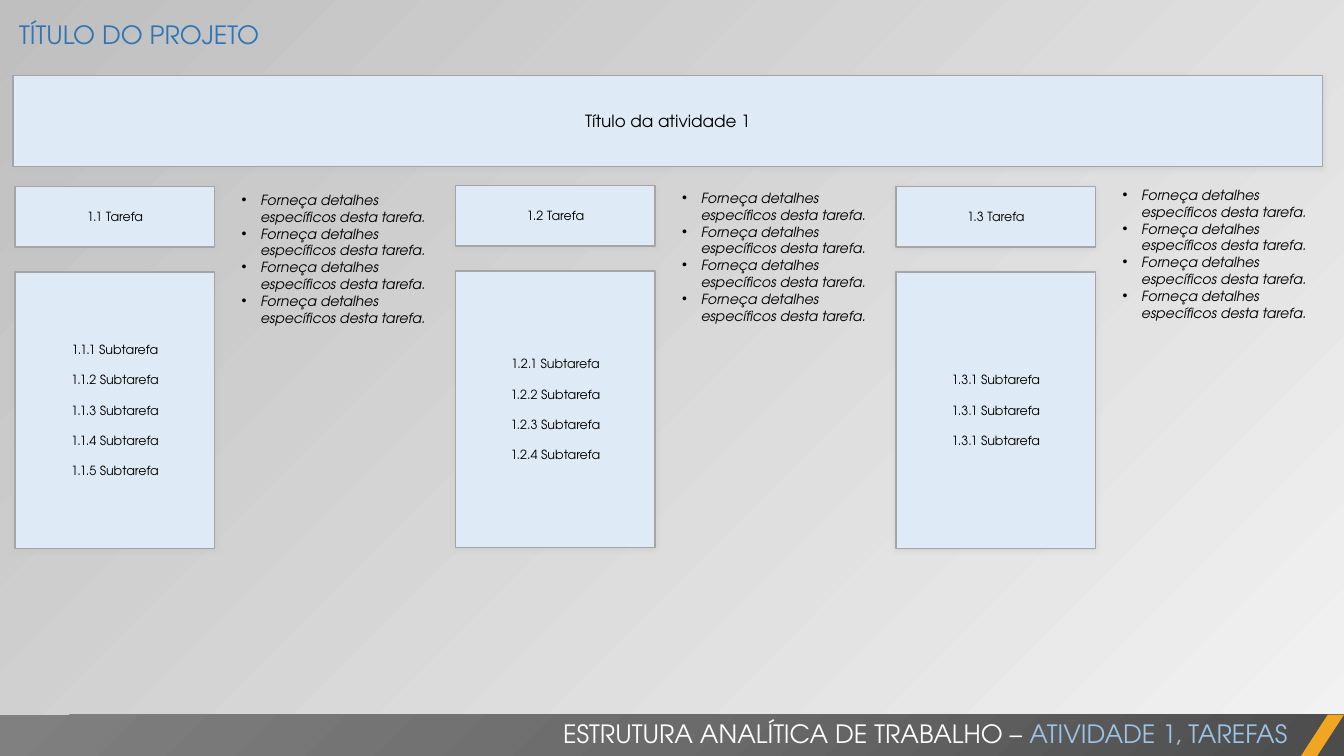
"""Build the work breakdown slide for activity 1 and its tasks."""
from lxml import etree
from pptx import Presentation
from pptx import util as u
from pptx.dml.color import RGBColor
from pptx.enum import shapes, text
from pptx.oxml import parse_xml
from pptx.oxml.ns import nsdecls, qn

FONT = "TeX Gyre Adventor"
COLORS = {
    "box": "DEEBF7", "line": "A5A5A5", "shadow": "BFBFBF", "ink": "000000",
    "title": "2E75B6", "white": "FFFFFF", "accent": "9DC3E6", "stripe": "F0A622",
    "bg_light": "F2F2F2", "bg_dark": "BFBFBF",
    "bar_dark": "4C4C4C", "bar_mid": "6B6B6B", "bar_light": "808080",
}
DETAIL = "Forneça detalhes específicos desta tarefa."
COLUMN_LEFT, COLUMN_PITCH = 10.8, 314.6
TASKS = [
    ("1.1 Tarefa", ["1.1.1", "1.1.2", "1.1.3", "1.1.4", "1.1.5"], 133.2, 133.2),
    ("1.2 Tarefa", ["1.2.1", "1.2.2", "1.2.3", "1.2.4"], 132.5, 131.8),
    ("1.3 Tarefa", ["1.3.1", "1.3.1", "1.3.1"], 133.2, 129.6),
]


def rgb(name):
    """Return a palette colour."""
    return RGBColor.from_string(COLORS[name])


def write(sp, paragraphs, size=9, align="CENTER", anchor="MIDDLE",
          italic=False, bullet=False, gap=0):
    """Fill a shape with paragraphs, each a list of (text, colour) runs."""
    tf = sp.text_frame
    tf.word_wrap = True
    tf.auto_size = text.MSO_AUTO_SIZE.NONE
    tf.vertical_anchor = text.MSO_ANCHOR[anchor]
    for i, runs in enumerate(paragraphs):
        p = tf.add_paragraph() if i else tf.paragraphs[0]
        p.alignment = text.PP_ALIGN[align]
        p.space_before = u.Pt(gap if i else 0)
        if bullet:
            add_bullet(p)
        for words, color in runs:
            r = p.add_run()
            r.text = words
            r.font.name = FONT
            r.font.size = u.Pt(size)
            r.font.italic = italic
            r.font.color.rgb = rgb(color)


def add_bullet(p):
    """Give a paragraph a round bullet and a hanging indent."""
    pPr = p._p.get_or_add_pPr()
    pPr.set("marL", str(u.Pt(13.5)))
    pPr.set("indent", str(u.Pt(-13.5)))
    etree.SubElement(pPr, qn("a:buFont")).set("typeface", "Arial")
    etree.SubElement(pPr, qn("a:buChar")).set("char", "•")


def set_gradient(parent, stops, direction):
    """Replace a solid fill by a gradient of (position, colour, alpha) stops."""
    marks = "".join(
        f'<a:gs pos="{pos * 1000}"><a:srgbClr val="{COLORS[color]}">'
        f'<a:alpha val="{alpha * 1000}"/></a:srgbClr></a:gs>'
        for pos, color, alpha in stops)
    grad = parse_xml(f'<a:gradFill {nsdecls("a")} rotWithShape="1">'
                     f'<a:gsLst>{marks}</a:gsLst>{direction}</a:gradFill>')
    parent.replace(parent.find(qn("a:solidFill")), grad)


def add_preset(s, kind, left, top, width, height, fill):
    """Add a plain preset shape without line or shadow."""
    sp = s.shapes.add_shape(shapes.MSO_SHAPE[kind], u.Pt(left), u.Pt(top),
                            u.Pt(width), u.Pt(height))
    sp.shadow.inherit = False
    sp.fill.solid()
    sp.fill.fore_color.rgb = rgb(fill)
    sp.line.fill.background()
    return sp


def add_box(s, left, top, width, height, lines, **fmt):
    """Add a pale blue box with a soft shadow and centred lines."""
    sp = add_preset(s, "RECTANGLE", left, top, width, height, "box")
    sp.line.color.rgb = rgb("line")
    sp.line.width = u.Pt(1)
    effects = sp._element.spPr.find(qn("a:effectLst"))
    effects.append(parse_xml(
        f'<a:outerShdw {nsdecls("a")} blurRad="{u.Pt(4)}" dist="{u.Pt(1)}" '
        f'dir="5400000" algn="t" rotWithShape="0">'
        f'<a:srgbClr val="{COLORS["shadow"]}"><a:alpha val="40000"/></a:srgbClr>'
        f'</a:outerShdw>'))
    write(sp, [[(line, "ink")] for line in lines], **fmt)


def add_label(s, left, top, width, height, paragraphs, **fmt):
    """Add a text box anchored at its top."""
    sp = s.shapes.add_textbox(u.Pt(left), u.Pt(top), u.Pt(width), u.Pt(height))
    write(sp, paragraphs, anchor="TOP", **fmt)


def add_task(s, left, task, subtasks, top, notes_top):
    """Add one task with its subtasks and its details."""
    add_box(s, left, top, 142.6, 43.2, [task])
    add_box(s, left, top + 61.2, 142.6, 197.3,
            [f"{number} Subtarefa" for number in subtasks], gap=10.8)
    add_label(s, left + 154.8, notes_top, 148.3, 216, [[(DETAIL, "ink")]] * 4,
              size=10, align="LEFT", italic=True, bullet=True)


def add_footer(s):
    """Add the dark bar, its orange stripe and its caption."""
    bar = add_preset(s, "RECTANGLE", 0, 510.5, 960, 30.2, "bar_mid")
    set_gradient(bar._element.spPr,
                 [(0, "bar_dark", 100), (50, "bar_mid", 100), (100, "bar_light", 100)],
                 '<a:path path="circle"><a:fillToRect l="100000" t="100000"/></a:path>')
    stripe = add_preset(s, "PARALLELOGRAM", 928.8, 510.5, 31.2, 30.2, "stripe")
    stripe.adjustments[0] = 0.65
    add_label(s, 208.1, 509.8, 718.6, 28.8,
              [[("ESTRUTURA ANALÍTICA DE TRABALHO – ", "white"),
                ("ATIVIDADE 1, TAREFAS", "accent")]], size=18, align="RIGHT")


def main():
    """Build and save the slide."""
    prs = Presentation()
    prs.slide_width, prs.slide_height = u.Pt(960), u.Pt(540)
    s = prs.slides.add_slide(prs.slide_layouts[5])
    s.background.fill.solid()
    set_gradient(s._element.find(".//" + qn("p:bgPr")),
                 [(0, "bg_light", 40), (100, "bg_dark", 100)],
                 '<a:lin ang="13500000" scaled="0"/>')
    title = s.shapes.title
    title.left, title.top = u.Pt(6.5), u.Pt(10.1)
    title.width, title.height = u.Pt(727.9), u.Pt(28.8)
    write(title, [[("TÍTULO DO PROJETO", "title")]], size=18, align="LEFT", anchor="TOP")
    add_box(s, 9.4, 54, 935.3, 64.8, ["Título da atividade 1"], size=12)
    for i, task in enumerate(TASKS):
        add_task(s, COLUMN_LEFT + i * COLUMN_PITCH, *task)
    add_footer(s)
    prs.save("out.pptx")


if __name__ == "__main__":
    main()
